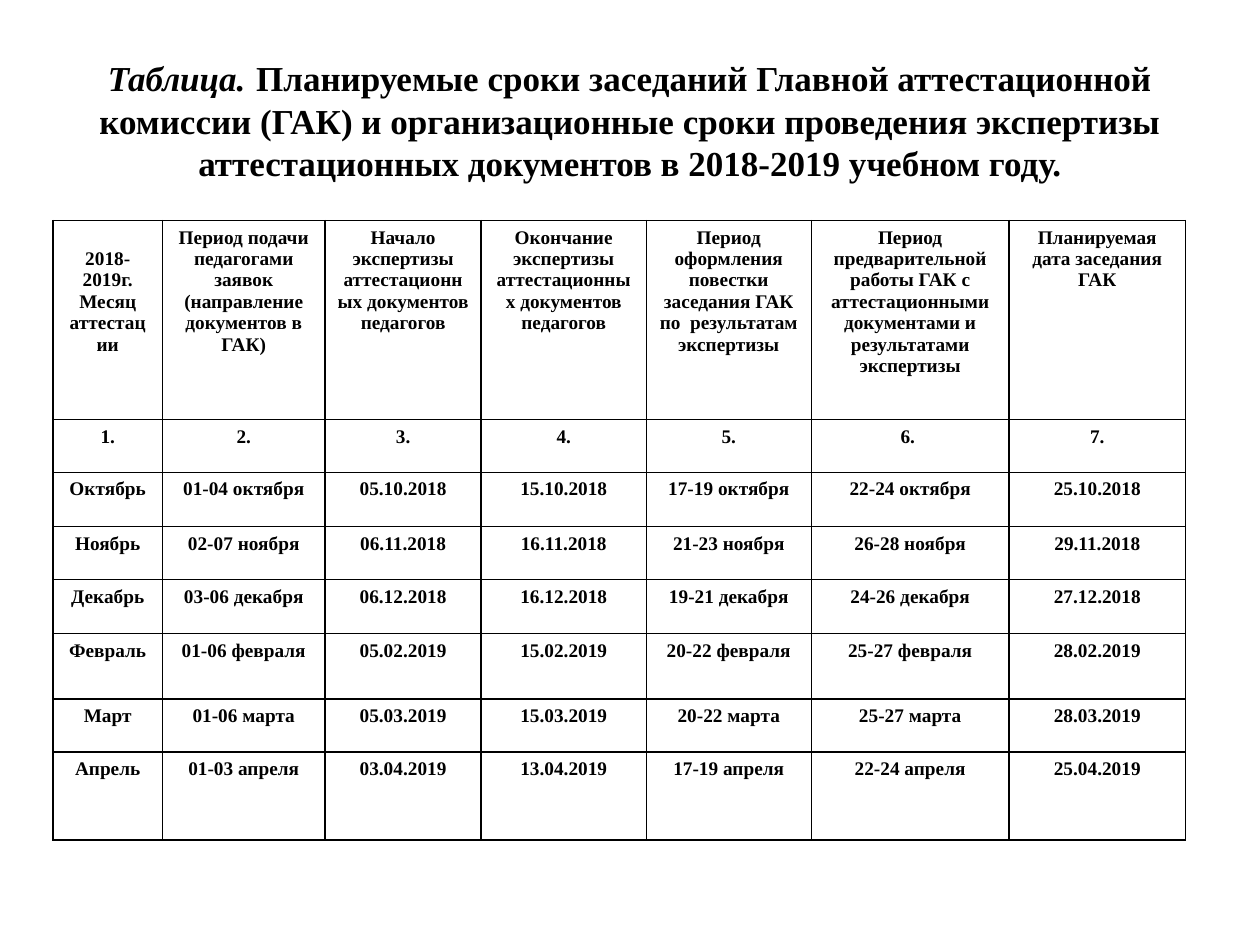
import dataclasses

import lxml.etree
import pptx
import pptx.dml.color
import pptx.enum.text
import pptx.oxml.ns
import pptx.util


@dataclasses.dataclass(frozen=True)
class Theme:
    """Colours, font and type sizes of the slide."""
    font: str = "Times New Roman"
    ink: str = "000000"
    paper: str = "FFFFFF"
    title_size: float = 20
    title_gap_size: float = 24
    table_size: float = 11
    border_width: float = 1


THEME = Theme()
CENTER = pptx.enum.text.PP_ALIGN.CENTER
TITLE_BOX = (36, 21.6, 648, 90)
SCHEDULE_BOX = (30.24, 126, 648, 354.24)
COLUMN_WIDTHS = (62.64, 92.88, 89.28, 94.32, 94.32, 113.04, 100.8)
ROW_HEIGHTS = (113.76, 30.24, 30.96, 30.24, 30.96, 37.44, 30.24, 50.4)
MONTH_HEADING_TOP = 15.8

TITLE_RUNS = (
    ("Таблица.", THEME.title_size, True),
    (" ", THEME.title_gap_size, False),
    ("Планируемые сроки заседаний Главной аттестационной комиссии (ГАК) "
     "и организационные сроки проведения экспертизы аттестационных "
     "документов в 2018-2019 учебном году.", THEME.title_size, False),
)
HEADINGS = (
    "2018-2019г.\nМесяц аттестации",
    "Период подачи педагогами заявок (направление документов в ГАК)",
    "Начало экспертизы аттестационных документов педагогов",
    "Окончание экспертизы аттестационных документов педагогов",
    "Период оформления повестки заседания ГАК по  результатам экспертизы",
    "Период предварительной работы ГАК с аттестационными документами "
    "и результатами экспертизы",
    "Планируемая дата заседания ГАК",
)
NUMBERS = ("1.", "2.", "3.", "4.", "5.", "6. ", "7.")
SESSIONS = (
    ("Октябрь", "01-04 октября", "05.10.2018", "15.10.2018",
     "17-19 октября", "22-24 октября", "25.10.2018"),
    ("Ноябрь", "02-07 ноября", "06.11.2018", "16.11.2018",
     "21-23 ноября", "26-28 ноября", "29.11.2018"),
    ("Декабрь", "03-06 декабря", "06.12.2018", "16.12.2018",
     "19-21 декабря", "24-26 декабря", "27.12.2018"),
    ("Февраль", "01-06 февраля", "05.02.2019", "15.02.2019",
     "20-22 февраля", "25-27 февраля", "28.02.2019"),
    ("Март", "01-06 марта", "05.03.2019", "15.03.2019",
     "20-22 марта", "25-27 марта", "28.03.2019"),
    ("Апрель", "01-03 апреля", "03.04.2019", "13.04.2019",
     "17-19 апреля", "22-24 апреля", "25.04.2019"),
)


def rgb(value):
    """Turn a hex string into a colour."""
    return pptx.dml.color.RGBColor.from_string(value)


def add_run(paragraph, text, size, italic=False):
    """Add one bold run in the theme font."""
    run = paragraph.add_run()
    run.text = text
    run.font.name = THEME.font
    run.font.size = pptx.util.Pt(size)
    run.font.bold = True
    run.font.italic = italic
    run.font.color.rgb = rgb(THEME.ink)


def add_borders(cell):
    """Draw a thin line on all four sides of a cell."""
    properties = cell._tc.get_or_add_tcPr()
    for index, side in enumerate(("a:lnL", "a:lnR", "a:lnT", "a:lnB")):
        line = lxml.etree.Element(pptx.oxml.ns.qn(side))
        line.set("w", str(pptx.util.Pt(THEME.border_width)))
        fill = lxml.etree.SubElement(line, pptx.oxml.ns.qn("a:solidFill"))
        color = lxml.etree.SubElement(fill, pptx.oxml.ns.qn("a:srgbClr"))
        color.set("val", THEME.ink)
        properties.insert(index, line)


def fill_cell(cell, text):
    """Write centred paragraphs in a bordered cell."""
    cell.fill.solid()
    cell.fill.fore_color.rgb = rgb(THEME.paper)
    add_borders(cell)
    for index, line in enumerate(text.split("\n")):
        frame = cell.text_frame
        paragraph = frame.add_paragraph() if index else frame.paragraphs[0]
        paragraph.alignment = CENTER
        add_run(paragraph, line, THEME.table_size)


def place_title(slide, box):
    """Move the title placeholder into the box and write the heading."""
    title = slide.shapes.title
    title.left, title.top, title.width, title.height = map(pptx.util.Pt, box)
    frame = title.text_frame
    frame.word_wrap = True
    frame.vertical_anchor = pptx.enum.text.MSO_ANCHOR.MIDDLE
    heading = frame.paragraphs[0]
    heading.alignment = CENTER
    for text, size, italic in TITLE_RUNS:
        add_run(heading, text, size, italic)


def place_schedule(slide, box):
    """Place the table of session dates in the box."""
    rows = (HEADINGS, NUMBERS, *SESSIONS)
    schedule = slide.shapes.add_table(
        len(rows), len(HEADINGS), *map(pptx.util.Pt, box)).table
    for column, width in zip(schedule.columns, COLUMN_WIDTHS):
        column.width = pptx.util.Pt(width)
    for row, height, texts in zip(schedule.rows, ROW_HEIGHTS, rows):
        row.height = pptx.util.Pt(height)
        for cell, text in zip(row.cells, texts):
            fill_cell(cell, text)
    schedule.cell(0, 0).margin_top = pptx.util.Pt(MONTH_HEADING_TOP)


def main():
    """Build and save the slide."""
    deck = pptx.Presentation()
    deck.slide_width = pptx.util.Pt(720)
    deck.slide_height = pptx.util.Pt(540)
    slide = deck.slides.add_slide(deck.slide_layouts[5])
    place_title(slide, TITLE_BOX)
    place_schedule(slide, SCHEDULE_BOX)
    deck.save("out.pptx")


if __name__ == "__main__":
    main()
